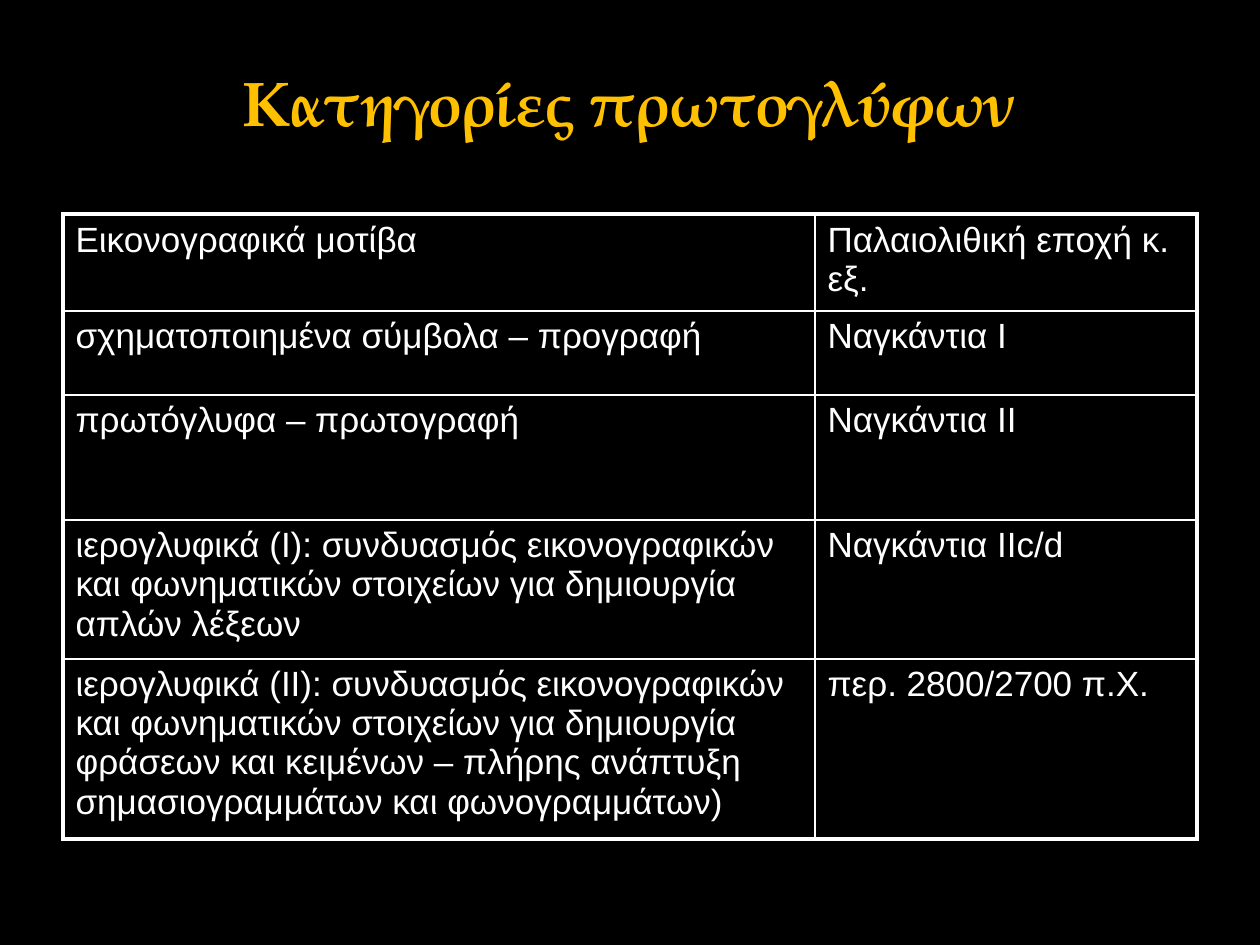
from pptx import Presentation
from pptx.dml.color import RGBColor
from pptx.enum.text import MSO_ANCHOR, PP_ALIGN
from pptx.oxml.ns import qn
from pptx.util import Pt
from lxml import etree

BLACK = RGBColor(0x00, 0x00, 0x00)
WHITE = RGBColor(0xFF, 0xFF, 0xFF)
GOLD = RGBColor(0xFF, 0xC0, 0x00)
CENTER = PP_ALIGN.CENTER
BOTTOM = MSO_ANCHOR.BOTTOM
SCALE = 914400 / 126
THIN, THICK = Pt(1), Pt(2.25)

TITLE = {"name": "TeX Gyre Pagella", "size": Pt(36), "bold": True}
BODY = {"name": "Arial", "size": Pt(20), "bold": False}
COLS = [752, 382]
ROWS = [
    (97, "Εικονογραφικά μοτίβα", "Παλαιολιθική εποχή κ. εξ."),
    (84, "σχηματοποιημένα σύμβολα – προγραφή", "Ναγκάντια Ι"),
    (125, "πρωτόγλυφα – πρωτογραφή", "Ναγκάντια ΙΙ"),
    (139, "ιερογλυφικά (Ι): συνδυασμός εικονογραφικών και φωνηματικών "
          "στοιχείων για δημιουργία απλών λέξεων", "Ναγκάντια ΙΙc/d"),
    (180, "ιερογλυφικά (ΙΙ): συνδυασμός εικονογραφικών και φωνηματικών "
          "στοιχείων για δημιουργία φράσεων και κειμένων – πλήρης ανάπτυξη "
          "σημασιογραμμάτων και φωνογραμμάτων)", "περ. 2800/2700 π.Χ."),
]


def px(*vals):
    return [round(v * SCALE) for v in vals]


def style(run, form, color):
    for key, val in form.items():
        setattr(run.font, key, val)
    run.font.color.rgb = color


# Slide and background
prs = Presentation()
prs.slide_width, prs.slide_height = px(1260, 945)
slide = prs.slides.add_slide(prs.slide_layouts[5])
slide.background.fill.solid()
slide.background.fill.fore_color.rgb = BLACK

# Title
title = slide.shapes.title
title.left, title.top, title.width, title.height = px(63, 38, 1134, 107)
frame = title.text_frame
frame.vertical_anchor = BOTTOM
frame.paragraphs[0].alignment = CENTER
run = frame.paragraphs[0].add_run()
run.text = "Κατηγορίες πρωτογλύφων"
style(run, TITLE, GOLD)
run.font._element.set("spc", "-100")

# Table grid
high = sum(row[0] for row in ROWS)
table = slide.shapes.add_table(len(ROWS), len(COLS),
                               *px(63, 214, sum(COLS), high)).table
table.first_row = table.horz_banding = False
for col, width in zip(table.columns, COLS):
    col.width = px(width)[0]

# Cells, with thick lines on the outer edge
for r, (height, *texts) in enumerate(ROWS):
    table.rows[r].height = px(height)[0]
    for c, text in enumerate(texts):
        cell = table.cell(r, c)
        run = cell.text_frame.paragraphs[0].add_run()
        run.text = text
        style(run, BODY, WHITE)
        props = cell._tc.get_or_add_tcPr()
        edges = {"lnL": c == 0, "lnR": c == len(COLS) - 1,
                 "lnT": r == 0, "lnB": r == len(ROWS) - 1}
        for tag, outer in edges.items():
            line = etree.SubElement(props, qn("a:" + tag),
                                    w=str(THICK if outer else THIN))
            fill = etree.SubElement(line, qn("a:solidFill"))
            etree.SubElement(fill, qn("a:srgbClr"), val=str(WHITE))
        cell.fill.background()

prs.save("out.pptx")
